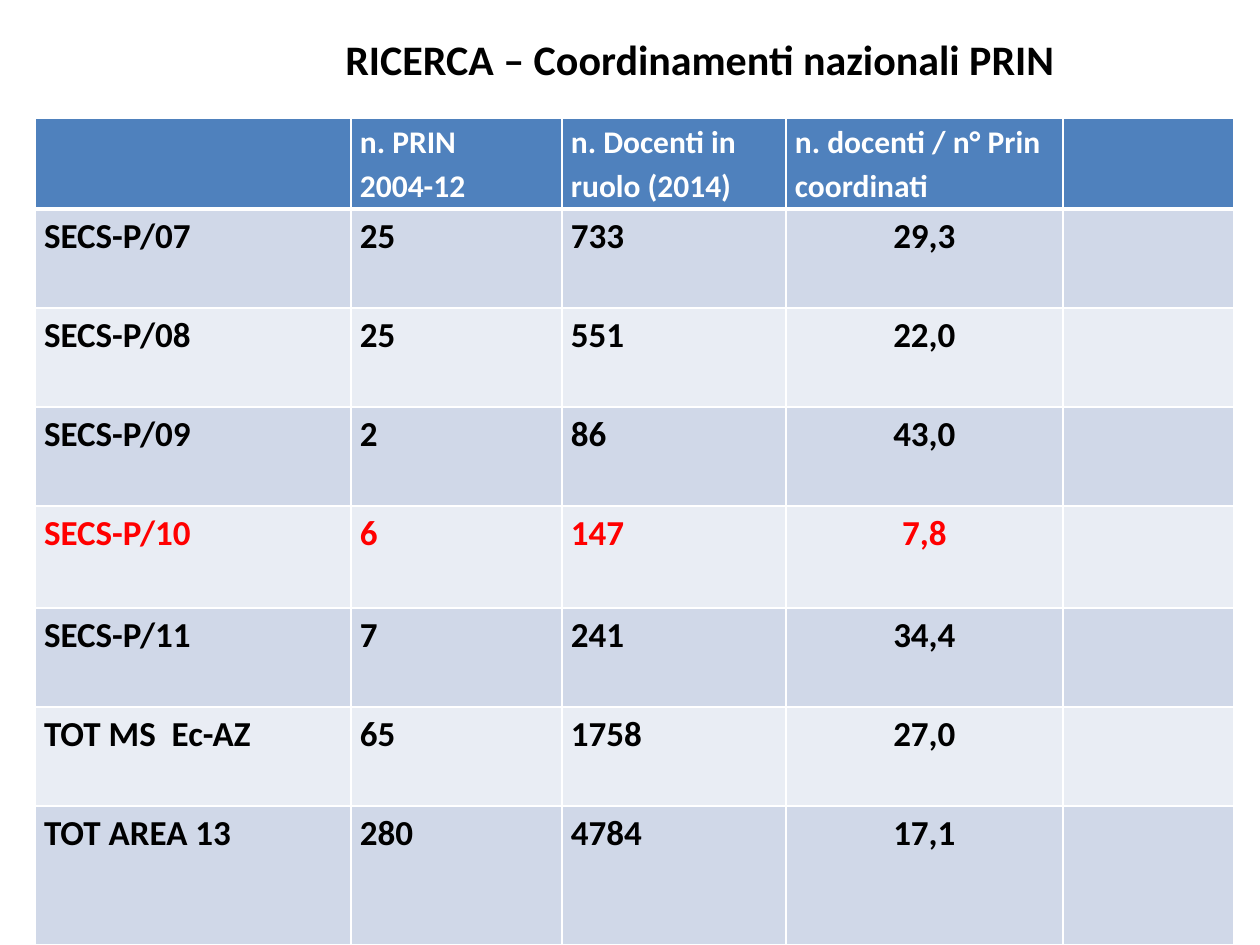
from dataclasses import dataclass

import pptx
import pptx.dml.color
import pptx.enum.text
import pptx.oxml
import pptx.oxml.ns
import pptx.util

EMU_PER_PX = 914400 / 126

WHITE = pptx.dml.color.RGBColor(0xFF, 0xFF, 0xFF)
BLACK = pptx.dml.color.RGBColor(0x00, 0x00, 0x00)
RED = pptx.dml.color.RGBColor(0xFF, 0x00, 0x00)
HEADER_BLUE = pptx.dml.color.RGBColor(0x4F, 0x81, 0xBD)
BAND_DARK = pptx.dml.color.RGBColor(0xD0, 0xD8, 0xE8)
BAND_LIGHT = pptx.dml.color.RGBColor(0xE9, 0xED, 0xF4)

LEFT = pptx.enum.text.PP_ALIGN.LEFT
CENTER = pptx.enum.text.PP_ALIGN.CENTER

COL_WIDTHS = [316, 211, 224, 277, 171]
HEADER = ["", "n. PRIN\n2004-12", "n. Docenti in ruolo (2014)",
          "n. docenti / n° Prin coordinati", ""]
HEADER_HEIGHT = 91


@dataclass
class SectorRow:
    sector: str
    prin: str
    staff: str
    ratio: str
    height: int = 99
    color: pptx.dml.color.RGBColor = BLACK

    def texts(self) -> list[str]:
        return [self.sector, self.prin, self.staff, self.ratio, ""]


ROWS = [
    SectorRow("SECS-P/07", "25", "733", "29,3"),
    SectorRow("SECS-P/08", "25", "551", "22,0"),
    SectorRow("SECS-P/09", "2", "86", "43,0"),
    SectorRow("SECS-P/10", "6", "147", "7,8", height=102, color=RED),
    SectorRow("SECS-P/11", "7", "241", "34,4"),
    SectorRow("TOT MS  Ec-AZ", "65", "1758", "27,0"),
    SectorRow("TOT AREA 13", "280", "4784", "17,1", height=139),
]


def px(n: int) -> pptx.util.Emu:
    return pptx.util.Emu(round(n * EMU_PER_PX))


def add_run(p, text: str, size: int, color: pptx.dml.color.RGBColor) -> None:
    r = p.add_run()
    r.text = text
    font_format = {"name": "Calibri", "size": pptx.util.Pt(size), "bold": True}
    for name, value in font_format.items():
        setattr(r.font, name, value)
    r.font.color.rgb = color


def set_borders(cell, top: int, bottom: int) -> None:
    """Put white borders, in points, ahead of the fill of the cell."""
    tc_pr = cell._tc.get_or_add_tcPr()
    widths = {"lnL": 1, "lnR": 1, "lnT": top, "lnB": bottom}
    for i, (tag, width) in enumerate(widths.items()):
        tc_pr.insert(i, pptx.oxml.parse_xml(
            f'<a:{tag} {pptx.oxml.ns.nsdecls("a")} w="{pptx.util.Pt(width)}">'
            f'<a:solidFill><a:srgbClr val="{WHITE}"/></a:solidFill></a:{tag}>'))


def fill_row(table, i: int, texts: list[str], size: int,
             color: pptx.dml.color.RGBColor, fill: pptx.dml.color.RGBColor,
             ratio_align: pptx.enum.text.PP_ALIGN) -> None:
    cell_format = {"margin_left": px(9), "margin_right": px(9),
                   "margin_top": 0, "margin_bottom": 0}
    for j, text in enumerate(texts):
        cell = table.cell(i, j)
        cell.fill.solid()
        cell.fill.fore_color.rgb = fill
        set_borders(cell, top=3 if i == 1 else 1, bottom=3 if i == 0 else 1)
        if not text:
            continue
        for name, value in cell_format.items():
            setattr(cell, name, value)
        tf = cell.text_frame
        for k, line in enumerate(text.split("\n")):
            p = tf.add_paragraph() if k else tf.paragraphs[0]
            p.line_spacing = 1.15
            p.alignment = ratio_align if j == 3 else LEFT
            add_run(p, line, size, color)


def add_sector_table(s) -> None:
    heights = [HEADER_HEIGHT] + [row.height for row in ROWS]
    table = s.shapes.add_table(len(heights), len(COL_WIDTHS), px(35), px(118),
                               px(sum(COL_WIDTHS)), px(sum(heights))).table
    for col, width in zip(table.columns, COL_WIDTHS):
        col.width = px(width)
    for row, height in zip(table.rows, heights):
        row.height = px(height)
    fill_row(table, 0, HEADER, 18, WHITE, HEADER_BLUE, LEFT)
    for i, row in enumerate(ROWS, start=1):
        band = BAND_DARK if i % 2 else BAND_LIGHT
        fill_row(table, i, row.texts(), 20, row.color, band, CENTER)


def add_title(s, text: str) -> None:
    sp = s.shapes.add_textbox(px(333), px(27), px(741), px(63))
    tf = sp.text_frame
    tf.word_wrap = False
    tf.auto_size = pptx.enum.text.MSO_AUTO_SIZE.SHAPE_TO_FIT_TEXT
    add_run(tf.paragraphs[0], text, 24, BLACK)


def main() -> None:
    prs = pptx.Presentation()
    prs.slide_width, prs.slide_height = px(1260), px(945)
    s = prs.slides.add_slide(prs.slide_layouts[6])

    # Table of research sectors
    add_sector_table(s)

    # Title
    add_title(s, "RICERCA – Coordinamenti nazionali PRIN")

    prs.save("out.pptx")


if __name__ == "__main__":
    main()
